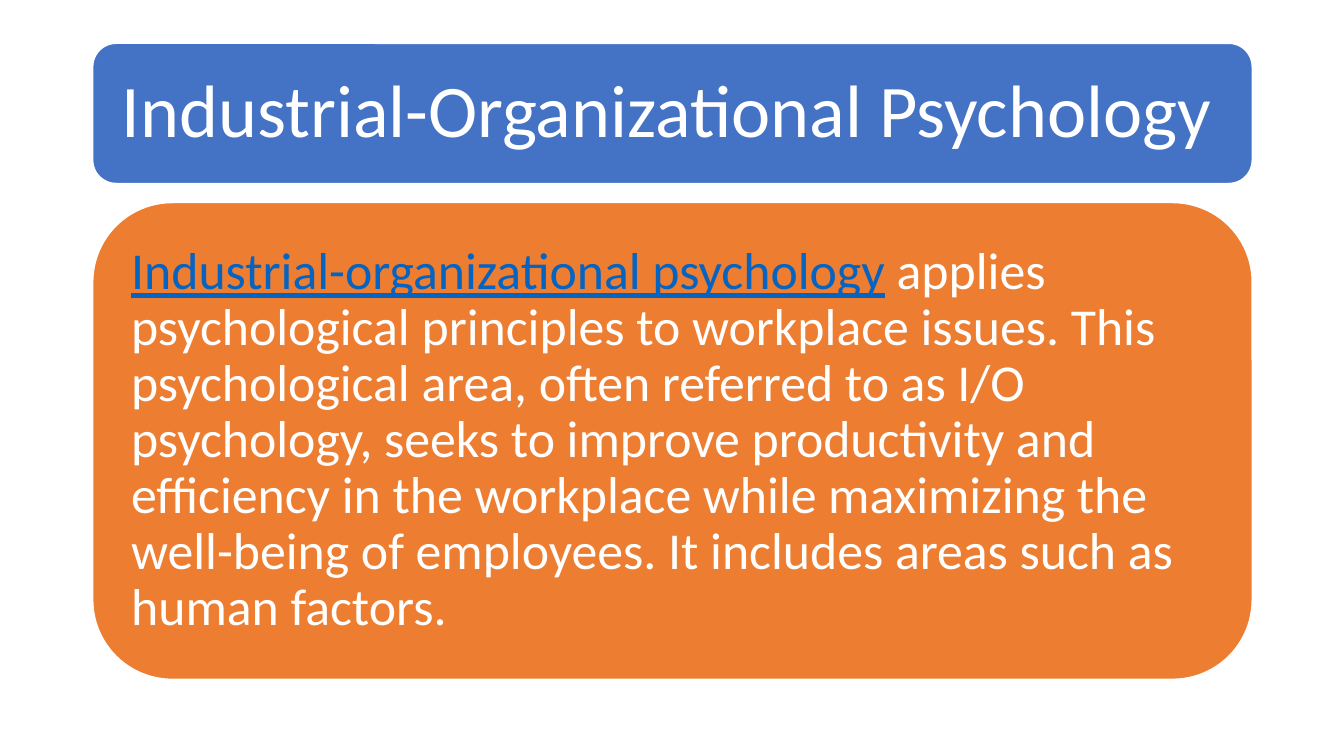
from dataclasses import dataclass

from pptx import Presentation
from pptx.dml.color import RGBColor
from pptx.enum.shapes import MSO_SHAPE as Preset
from pptx.enum.text import MSO_ANCHOR as Anchor, PP_ALIGN as Align
from pptx.slide import Slide
from pptx.util import Inches, Pt

WHITE = RGBColor(0xFF, 0xFF, 0xFF)
BLUE = RGBColor(0x44, 0x72, 0xC4)
ORANGE = RGBColor(0xED, 0x7D, 0x31)
LINK_BLUE = RGBColor(0x05, 0x63, 0xC1)
FONT = "Calibri"
PANEL_LEFT = 0.92
PANEL_WIDTH = 11.5


@dataclass(frozen=True)
class Span:
    text: str
    color: RGBColor = WHITE
    underline: bool = False


@dataclass(frozen=True)
class Panel:
    top: float
    height: float
    fill: RGBColor
    inset: float
    size: int
    spans: tuple[Span, ...]


PANELS = (
    Panel(0.43, 1.39, BLUE, 0.22, 53, (Span("Industrial-Organizational Psychology"),)),
    Panel(2.01, 4.73, ORANGE, 0.15, 37, (
        Span("Industrial-organizational psychology", LINK_BLUE, True),
        Span(
            " applies psychological principles to workplace issues. "
            "This psychological area, often referred to as I/O psychology, "
            "seeks to improve productivity and efficiency in the workplace "
            "while maximizing the well-being of employees. "
            "It includes areas such as human factors."
        ),
    )),
)


def draw_panel(page: Slide, panel: Panel) -> None:
    box = page.shapes.add_shape(
        Preset.ROUNDED_RECTANGLE,
        Inches(PANEL_LEFT), Inches(panel.top),
        Inches(PANEL_WIDTH), Inches(panel.height),
    )
    box.shadow.inherit = False
    box.fill.solid()
    box.fill.fore_color.rgb = panel.fill
    box.line.color.rgb = WHITE
    box.line.width = Pt(1)

    frame = box.text_frame
    frame.word_wrap = True
    frame.vertical_anchor = Anchor.MIDDLE
    frame.margin_left = frame.margin_right = Inches(panel.inset)
    frame.margin_top = frame.margin_bottom = Inches(panel.inset)

    para = frame.paragraphs[0]
    para.alignment = Align.LEFT
    para.line_spacing = 0.9
    for span in panel.spans:
        run = para.add_run()
        run.text = span.text
        run.font.name = FONT
        run.font.size = Pt(panel.size)
        run.font.color.rgb = span.color
        run.font.underline = span.underline


def main() -> None:
    deck = Presentation()
    deck.slide_width = Inches(13.33)
    deck.slide_height = Inches(7.5)
    page = deck.slides.add_slide(deck.slide_layouts[6])
    for panel in PANELS:
        draw_panel(page, panel)
    deck.save("out.pptx")


if __name__ == "__main__":
    main()
